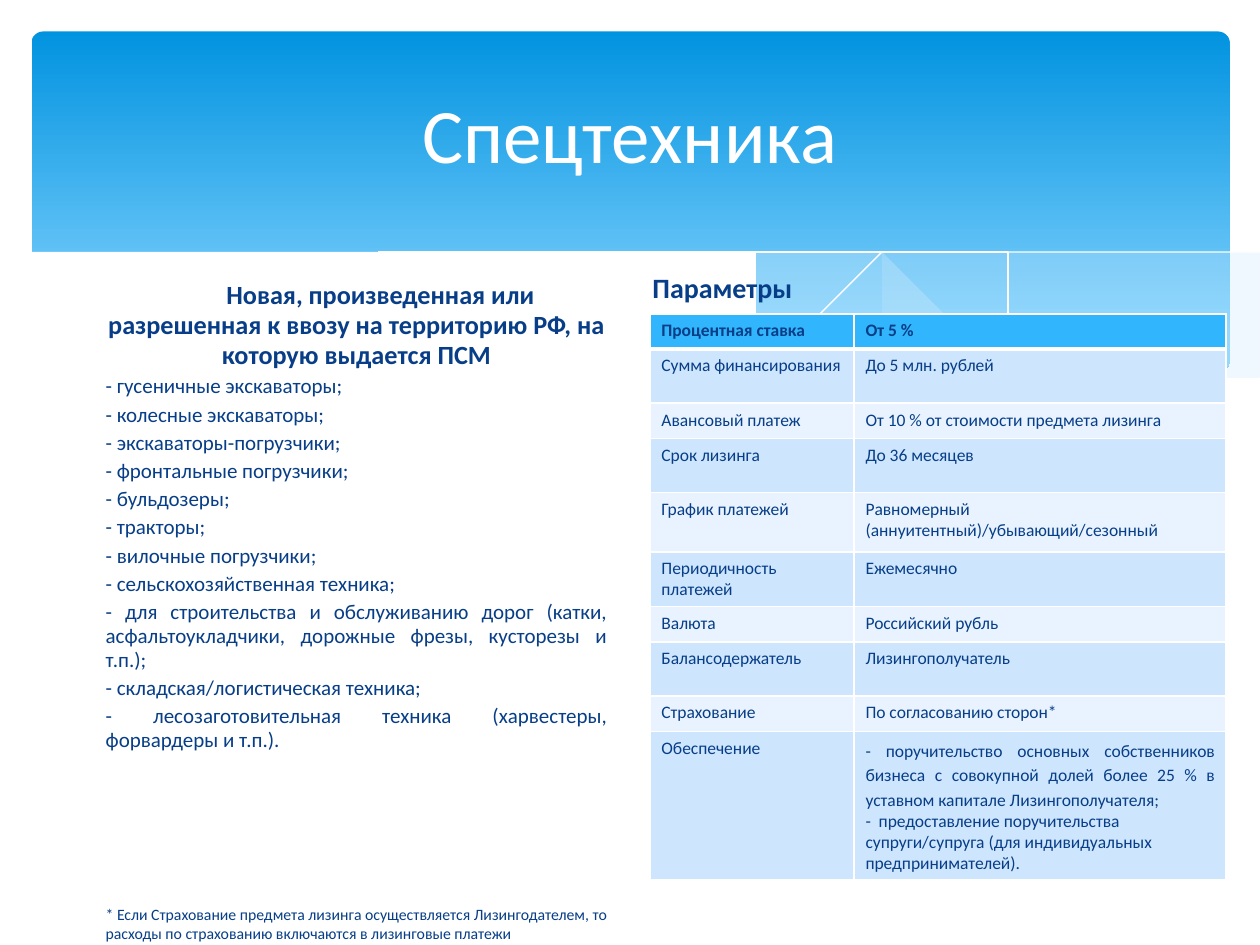
from dataclasses import dataclass, field
from typing import Optional

import pptx
import pptx.dml.color
import pptx.enum.shapes
import pptx.enum.text
import pptx.oxml
import pptx.oxml.ns
import pptx.util

RGB = pptx.dml.color.RGBColor
ALIGN = pptx.enum.text.PP_ALIGN
ANCHOR = pptx.enum.text.MSO_ANCHOR
Pt = pptx.util.Pt

WHITE = RGB(0xFF, 0xFF, 0xFF)
NAVY = RGB(0x07, 0x3E, 0x87)
SKY_TOP = RGB(0x02, 0x93, 0xE0)
SKY_BOTTOM = RGB(0x83, 0xD3, 0xFE)
MIST = RGB(0xC6, 0xE7, 0xFC)
HEADER = RGB(0x31, 0xB6, 0xFD)
BANDS = (RGB(0xE8, 0xF3, 0xFF), RGB(0xCE, 0xE5, 0xFE))

COLUMNS, ROWS = 10, 7.5  # square grid cells across and down the slide
CELL = pptx.util.Inches(1)


def cells(n: float) -> int:
    return round(n * CELL)


@dataclass
class Para:
    text: str
    size: float
    bold: bool = False
    color: RGB = NAVY
    indent: float = 0
    fmt: dict = field(default_factory=dict)


@dataclass
class TextBlock:
    box: tuple
    paras: list
    anchor: ANCHOR = ANCHOR.TOP


@dataclass
class Wave:
    """Smooth curves, each given by a few knots, joined end to end."""
    curves: list
    fill: Optional[RGB] = None
    opacity: int = 100


WAVES = [
    Wave([[(9.76, 2), (9.06, 2.13), (8.05, 2.37), (6.61, 2.65)],
          [(6.61, 2.65), (7.45, 2.75), (8.24, 2.77), (9.05, 2.69), (9.76, 2.47)]], MIST, 29),
    Wave([[(8.93, 2.73), (7.41, 2.47), (5.98, 2.14), (4.65, 1.91), (3.61, 1.85), (2.86, 1.91)],
          [(2.86, 1.91), (4.04, 2.11), (5.66, 2.48), (6.95, 2.7), (7.96, 2.78), (8.93, 2.73)]],
         MIST, 40),
    Wave([[(3.09, 1.95), (4.16, 1.87), (5.33, 1.94), (6.65, 2.13), (7.95, 2.41), (9.07, 2.72)]]),
    Wave([[(6.13, 2.57), (7.48, 2.23), (8.66, 1.99), (9.75, 1.85)]]),
    Wave([[(9.77, 2.46), (8.99, 2.69), (8.09, 2.77), (6.88, 2.68), (5.55, 2.45), (4.47, 2.2),
           (3.4, 1.97), (2.5, 1.86), (1.77, 1.84), (0.95, 1.91), (0.23, 2.13)],
          [(0.23, 3.29), (9.77, 3.29)]], WHITE),
]

MACHINES = [
    "гусеничные экскаваторы;", "колесные экскаваторы;", "экскаваторы-погрузчики;",
    "фронтальные погрузчики;", "бульдозеры;", "тракторы;", "вилочные погрузчики;",
    "сельскохозяйственная техника;",
    "для строительства и обслуживанию дорог (катки, асфальтоукладчики, дорожные фрезы, "
    "кусторезы и т.п.);",
    "складская/логистическая техника;",
    "лесозаготовительная техника (харвестеры, форвардеры и т.п.).",
]
MACHINE_FMT = {"alignment": ALIGN.JUSTIFY, "line_spacing": 0.95, "space_before": Pt(2.4)}

TEXTS = [
    TextBlock((0.5, 0.37, 9, 1.37),
              [Para("Спецтехника", 44, color=WHITE, fmt={"alignment": ALIGN.CENTER})],
              ANCHOR.MIDDLE),
    TextBlock((0.74, 2.18, 4.18, 4.09), [
        Para("Новая, произведенная или разрешенная к ввозу на территорию РФ, на которую "
             "выдается ПСМ", 15, True, indent=0.38,
             fmt={"alignment": ALIGN.CENTER, "line_spacing": 0.95}),
        *(Para(f"- {m}", 12, fmt=MACHINE_FMT) for m in MACHINES),
        Para("* Если Страхование предмета лизинга осуществляется Лизингодателем, то расходы "
             "по страхованию включаются в лизинговые платежи", 9,
             fmt={"space_before": Pt(87)}),
    ]),
    TextBlock((5.08, 2.1, 4.18, 0.39), [Para("Параметры", 16, True)]),
]

TABLE_AT = (5.16, 2.49)
TABLE_COLS = (1.62, 2.95)
SHORT, TALL = 0.28, 0.43
TERMS = [
    (SHORT, "Процентная ставка", "От 5 %"),
    (TALL, "Сумма финансирования", "До 5 млн. рублей"),
    (SHORT, "Авансовый платеж", "От 10 % от стоимости предмета лизинга"),
    (TALL, "Срок лизинга", "До 36 месяцев"),
    (0.47, "График платежей", "Равномерный (аннуитентный)/убывающий/сезонный"),
    (TALL, "Периодичность платежей", "Ежемесячно"),
    (SHORT, "Валюта", "Российский рубль"),
    (TALL, "Балансодержатель", "Лизингополучатель"),
    (SHORT, "Страхование", "По согласованию сторон*"),
    (1.17, "Обеспечение",
     "- поручительство основных собственников бизнеса с совокупной долей более 25 % в уставном "
     "капитале Лизингополучателя;\n"
     "-  предоставление поручительства супруги/супруга (для индивидуальных предпринимателей)."),
]


def write(tf, paras: list) -> None:
    for i, para in enumerate(paras):
        p = tf.add_paragraph() if i else tf.paragraphs[0]
        for name, value in para.fmt.items():
            setattr(p, name, value)
        if para.indent:
            p._p.get_or_add_pPr().set("indent", str(cells(para.indent)))
        r = p.add_run()
        r.text = para.text
        for name, value in {"name": "Calibri", "size": Pt(para.size), "bold": para.bold}.items():
            setattr(r.font, name, value)
        r.font.color.rgb = para.color


def draw_sky(s) -> None:
    sp = s.shapes.add_shape(pptx.enum.shapes.MSO_SHAPE.ROUNDED_RECTANGLE,
                            *map(cells, (0.25, 0.25, 9.51, 2.7)))
    sp.adjustments[0] = 0.034
    sp.shadow.inherit = False
    sp.line.fill.background()
    sp.fill.gradient()
    sp.fill.gradient_angle = 270
    for stop, color, position in zip(sp.fill.gradient_stops, (SKY_TOP, SKY_BOTTOM), (0, 0.9)):
        stop.color.rgb = color
        stop.position = position


def smooth(knots: list, steps: int = 8) -> list:
    """Points of the Catmull-Rom spline through the knots."""
    if len(knots) < 3:
        return knots
    padded = [knots[0], *knots, knots[-1]]
    points = [knots[0]]
    for quad in zip(padded, padded[1:], padded[2:], padded[3:]):
        for t in (n / steps for n in range(1, steps + 1)):
            points.append(tuple(
                b + t * (c - a + t * (2 * a - 5 * b + 4 * c - d + t * (3 * b - a - 3 * c + d))) / 2
                for a, b, c, d in zip(*quad)))
    return points


def draw_wave(s, wave: Wave) -> None:
    """A wave with a fill is a closed area; one without is a white hairline."""
    points = [point for curve in wave.curves for point in smooth(curve)]
    builder = s.shapes.build_freeform(*points[0], scale=CELL)
    builder.add_line_segments(points[1:], close=wave.fill is not None)
    sp = builder.convert_to_shape()
    sp.shadow.inherit = False
    if wave.fill is None:
        sp.fill.background()
        sp.line.color.rgb = WHITE
        sp.line.width = Pt(0)
        return
    sp.line.fill.background()
    sp.fill.solid()
    sp.fill.fore_color.rgb = wave.fill
    if wave.opacity < 100:
        color = sp._element.spPr.find(".//" + pptx.oxml.ns.qn("a:srgbClr"))
        color.append(color.makeelement(pptx.oxml.ns.qn("a:alpha"),
                                       {"val": str(wave.opacity * 1000)}))


def draw_text(s, block: TextBlock) -> None:
    tf = s.shapes.add_textbox(*map(cells, block.box)).text_frame
    tf.word_wrap = True
    tf.vertical_anchor = block.anchor
    write(tf, block.paras)


def set_borders(cell, widths: dict) -> None:
    tcPr = cell._tc.get_or_add_tcPr()
    for side in ("L", "R", "T", "B"):
        tcPr.append(pptx.oxml.parse_xml(
            f'<a:ln{side} {pptx.oxml.ns.nsdecls("a")} w="{int(Pt(widths.get(side, 1)))}">'
            f'<a:solidFill><a:srgbClr val="{WHITE}"/></a:solidFill></a:ln{side}>'))


def draw_terms(s) -> None:
    size = sum(TABLE_COLS), sum(row[0] for row in TERMS)
    table = s.shapes.add_table(len(TERMS), len(TABLE_COLS),
                               *map(cells, TABLE_AT + size)).table
    for column, width in zip(table.columns, TABLE_COLS):
        column.width = cells(width)
    for i, (height, *texts) in enumerate(TERMS):
        table.rows[i].height = cells(height)
        for j, text in enumerate(texts):
            cell = table.cell(i, j)
            cell.margin_left = cell.margin_right = cells(0.09)
            set_borders(cell, {0: {"B": 3}, 1: {"T": 3}}.get(i, {}))
            cell.fill.solid()
            cell.fill.fore_color.rgb = BANDS[i % 2] if i else HEADER
            paras = [Para(line, 10, i == 0) for line in text.split("\n")]
            if len(paras) > 1:
                paras[0].fmt = {"alignment": ALIGN.JUSTIFY, "line_spacing": 1.15}
            write(cell.text_frame, paras)


def main() -> None:
    prs = pptx.Presentation()
    prs.slide_width, prs.slide_height = cells(COLUMNS), cells(ROWS)
    s = prs.slides.add_slide(prs.slide_layouts[6])
    draw_sky(s)
    for wave in WAVES:
        draw_wave(s, wave)
    for block in TEXTS:
        draw_text(s, block)
    draw_terms(s)
    prs.save("out.pptx")


if __name__ == "__main__":
    main()
